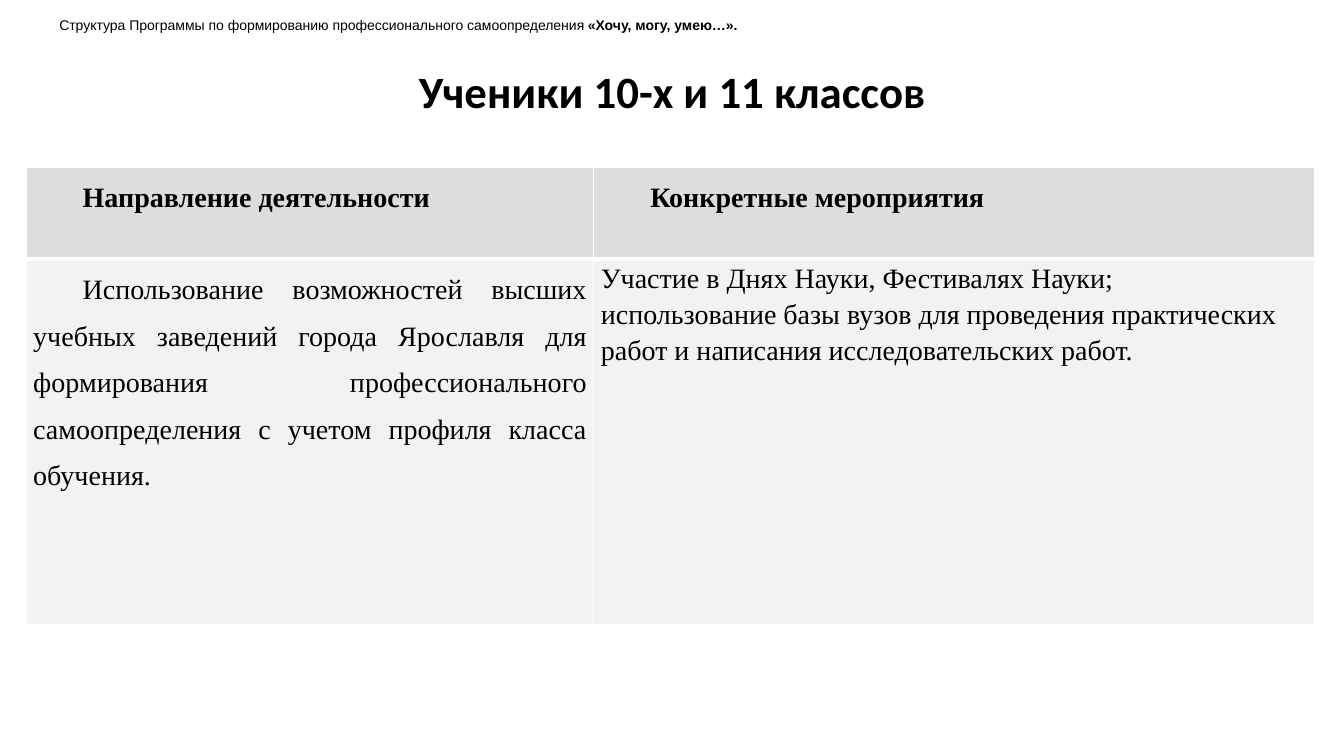
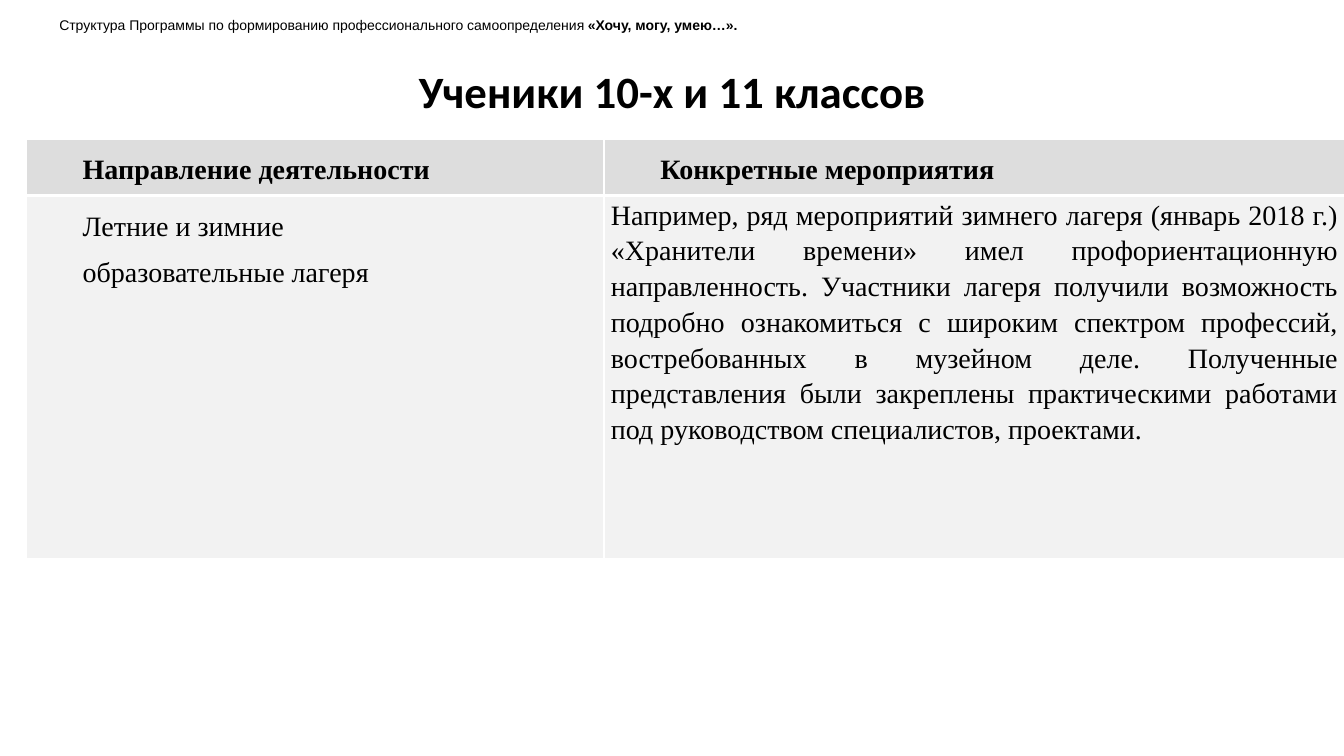
from dataclasses import dataclass

from lxml.etree import SubElement
from pptx import Presentation
from pptx.dml.color import RGBColor as RGB
from pptx.enum.text import MSO_ANCHOR as ANCHOR, PP_ALIGN as ALIGN
from pptx.oxml.ns import qn
from pptx.util import Inches, Pt


@dataclass(frozen=True)
class Theme:
    """Colours, fonts and sizes shared by the slides."""
    ink: str = "000000"
    border: str = "FFFFFF"
    header_fill: str = "DDDDDD"
    body_fill: str = "F2F2F2"
    title_font: str = "Calibri"
    table_font: str = "Times New Roman"
    caption_font: str = "Arial"
    title_size: int = 32
    table_size: int = 20
    caption_size: int = 10
    indent: float = 0.49
    thin: int = 1
    thick: int = 3


THEME = Theme()
CAPTION = ("Структура Программы по формированию профессионального самоопределения ",
           "«Хочу, могу, умею…».")
TITLE = "Ученики 10-х и 11 классов"
HEADERS = ("Направление деятельности", "Конкретные мероприятия")
CAPTION_BOX = (0, 0, 13.33, 0.5)
TITLE_BOX = (0.92, 0.5, 11.5, 0.8)

SLIDES = (
    dict(origin=(0.26, 1.66), cols=(5.63, 7.15), rows=(0.91, 3.63),
         direction="Использование возможностей высших учебных заведений города Ярославля "
                   "для формирования профессионального самоопределения с учетом профиля "
                   "класса обучения.",
         events="Участие в Днях Науки, Фестивалях Науки;\n"
                "использование базы вузов для проведения практических работ и написания "
                "исследовательских работ.",
         events_align=ALIGN.LEFT),
    dict(origin=(0.26, 1.38), cols=(5.73, 7.35), rows=(0.56, 3.6),
         direction="Летние и зимние\nобразовательные лагеря",
         events="Например, ряд мероприятий зимнего лагеря (январь 2018 г.) «Хранители "
                "времени» имел профориентационную направленность. Участники лагеря получили "
                "возможность подробно ознакомиться с широким спектром профессий, "
                "востребованных в музейном деле. Полученные представления были закреплены "
                "практическими работами под руководством специалистов, проектами.",
         events_align=ALIGN.JUSTIFY),
)


def style_font(font, name, size, bold=False):
    """Apply a typeface, size and weight in the ink colour."""
    font.name, font.size, font.bold = name, Pt(size), bold
    font.color.rgb = RGB.from_string(THEME.ink)


def indent_first_line(p):
    """Indent the first line of a paragraph."""
    pPr = p._p.get_or_add_pPr()
    pPr.set("marL", "0")
    pPr.set("indent", str(Inches(THEME.indent)))


def set_borders(cell, top, bottom):
    """Draw the four cell borders, thin at the sides."""
    tcPr = cell._tc.get_or_add_tcPr()
    widths = dict(lnL=THEME.thin, lnR=THEME.thin, lnT=top, lnB=bottom)
    for i, (tag, width) in enumerate(widths.items()):
        ln = SubElement(tcPr, qn(f"a:{tag}"), w=str(Pt(width)))
        SubElement(SubElement(ln, qn("a:solidFill")), qn("a:srgbClr"), val=THEME.border)
        tcPr.insert(i, ln)


def fill_cell(cell, text, fill, align=ALIGN.JUSTIFY, spacing=1.5, indent=True, bold=False):
    """Write and format the text of one table cell."""
    cell.fill.solid()
    cell.fill.fore_color.rgb = RGB.from_string(fill)
    cell.margin_left = cell.margin_right = Inches(0.07)
    cell.margin_top = cell.margin_bottom = 0
    cell.text_frame.text = text
    for p in cell.text_frame.paragraphs:
        p.alignment, p.line_spacing = align, spacing
        if indent:
            indent_first_line(p)
        for r in p.runs:
            style_font(r.font, THEME.table_font, THEME.table_size, bold)


def add_title(s, box):
    """Place the centred title in its box."""
    sp = s.shapes.title
    sp.left, sp.top, sp.width, sp.height = map(Inches, box)
    tf = sp.text_frame
    tf.text = TITLE
    tf.vertical_anchor = ANCHOR.MIDDLE
    p = tf.paragraphs[0]
    p.alignment = ALIGN.CENTER
    style_font(p.runs[0].font, THEME.title_font, THEME.title_size, True)


def add_caption(s, box):
    """Place the programme line in its box."""
    tf = s.shapes.add_textbox(*map(Inches, box)).text_frame
    tf.word_wrap = True
    tf.vertical_anchor = ANCHOR.MIDDLE
    p = tf.paragraphs[0]
    indent_first_line(p)
    for text, bold in zip(CAPTION, (False, True)):
        r = p.add_run()
        r.text = text
        style_font(r.font, THEME.caption_font, THEME.caption_size, bold)


def add_activity_table(s, origin, cols, rows, direction, events, events_align):
    """Place the table of directions and events at its origin."""
    box = (*origin, sum(cols), sum(rows))
    table = s.shapes.add_table(len(rows), len(cols), *map(Inches, box)).table
    table.horz_banding = False
    for col, width in zip(table.columns, cols):
        col.width = Inches(width)
    for row, height in zip(table.rows, rows):
        row.height = Inches(height)
    for c, text in enumerate(HEADERS):
        fill_cell(table.cell(0, c), text, THEME.header_fill, bold=True)
        set_borders(table.cell(0, c), THEME.thin, THEME.thick)
        set_borders(table.cell(1, c), THEME.thick, THEME.thin)
    fill_cell(table.cell(1, 0), direction, THEME.body_fill)
    fill_cell(table.cell(1, 1), events, THEME.body_fill, events_align, 1.15, indent=False)


def add_activity_slide(prs, content):
    """Add one slide with title, table and programme line."""
    s = prs.slides.add_slide(prs.slide_layouts[5])
    add_title(s, TITLE_BOX)
    add_activity_table(s, **content)
    add_caption(s, CAPTION_BOX)


def main():
    """Build and save the presentation."""
    prs = Presentation()
    prs.slide_width, prs.slide_height = Inches(13.33), Inches(7.5)
    for content in SLIDES:
        add_activity_slide(prs, content)
    prs.save("out.pptx")


if __name__ == "__main__":
    main()
